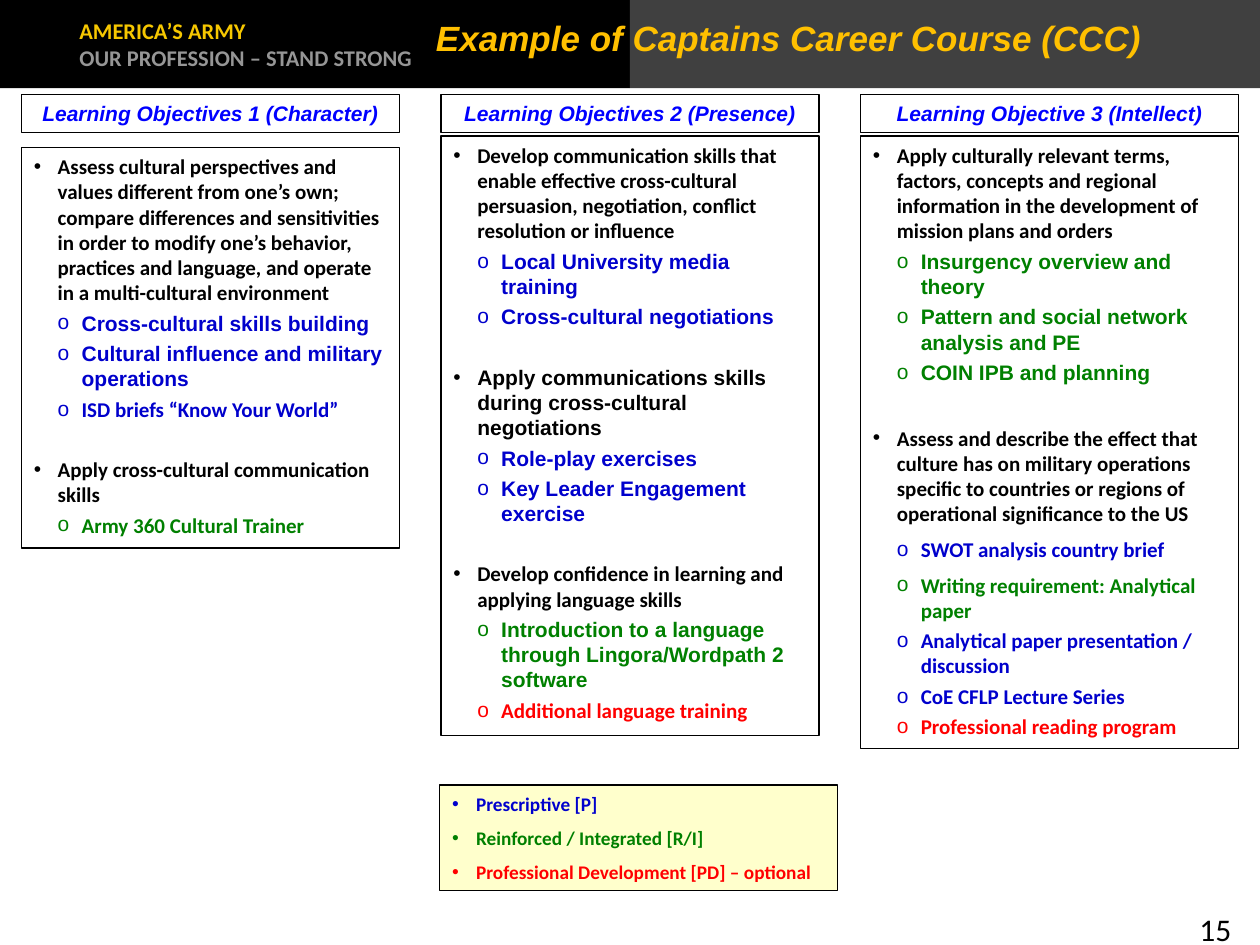
from dataclasses import dataclass

from lxml.etree import SubElement
from pptx import Presentation
from pptx.dml.color import RGBColor
from pptx.enum.shapes import MSO_SHAPE as Preset
from pptx.enum.text import MSO_ANCHOR as Anchor, PP_ALIGN as Align
from pptx.oxml.ns import qn
from pptx.util import Inches, Pt

BLACK, BLUE, GREEN, RED = "000000", "0000CC", "008000", "FF0000"
GOLD, HEADING_BLUE = "FFC000", "0000FF"
COLUMN_WIDTH = 3
COLUMN_PITCH = 3.33
COLUMN_LEFT = 0.17


@dataclass(frozen=True)
class Item:
    text: str
    color: str = BLACK
    font: str = "Calibri"
    bullet: str = "•"
    before: float = 3
    after: float = 0


@dataclass(frozen=True)
class Column:
    heading: str
    top: float
    height: float
    items: tuple[Item, ...]


def activity(text: str, color: str, font: str = "Calibri", after: float = 0) -> Item:
    return Item(text, color, font, bullet="o", after=after)


def rgb(color: str) -> RGBColor:
    return RGBColor.from_string(color)


def write(frame, text: str, *, size: float, color: str, font: str = "Calibri",
          bold: bool = True, italic: bool = False, align=Align.LEFT,
          bullet: str = "", margin: float = 0, hang: float = 0,
          before: float = 0, after: float = 0) -> None:
    is_first = not frame.text
    paragraph = frame.paragraphs[0] if is_first else frame.add_paragraph()
    paragraph.alignment = align
    paragraph.space_before = Pt(0 if is_first else before)
    paragraph.space_after = Pt(after)
    properties = paragraph._p.get_or_add_pPr()
    properties.set("marL", str(Inches(margin)))
    properties.set("indent", str(Inches(-hang)))
    if bullet:
        SubElement(properties, qn("a:buFont"), typeface="Arial")
        SubElement(properties, qn("a:buChar"), char=bullet)
    run = paragraph.add_run()
    run.text = text
    run.font.name = font
    run.font.size = Pt(size)
    run.font.bold = bold
    run.font.italic = italic
    run.font.color.rgb = rgb(color)


def draw_box(slide, left: float, top: float, width: float, height: float, *,
             fill: str = "", outline: str = "", anchor=Anchor.TOP):
    box = slide.shapes.add_shape(
        Preset.RECTANGLE, Inches(left), Inches(top), Inches(width), Inches(height))
    box.shadow.inherit = False
    if fill:
        box.fill.solid()
        box.fill.fore_color.rgb = rgb(fill)
    else:
        box.fill.background()
    if outline:
        box.line.color.rgb = rgb(outline)
        box.line.width = Pt(0.75)
    else:
        box.line.fill.background()
    box.text_frame.word_wrap = True
    box.text_frame.vertical_anchor = anchor
    return box.text_frame


def add_text(slide, left: float, top: float, width: float, height: float):
    frame = slide.shapes.add_textbox(
        Inches(left), Inches(top), Inches(width), Inches(height)).text_frame
    frame.word_wrap = True
    return frame


def write_items(frame, items: tuple[Item, ...], size: float) -> None:
    for item in items:
        write(frame, item.text, size=size, color=item.color, font=item.font,
              bullet=item.bullet, margin=0.38 if item.bullet == "o" else 0.19,
              hang=0.19, before=item.before, after=item.after)


def draw_column(slide, left: float, column: Column) -> None:
    heading = draw_box(slide, left, 0.75, COLUMN_WIDTH, 0.3, outline=BLACK)
    write(heading, column.heading, size=12, color=HEADING_BLUE, font="Arial",
          italic=True, align=Align.CENTER)
    body = draw_box(slide, left, column.top, COLUMN_WIDTH, column.height, outline=BLACK)
    write_items(body, column.items, 12)


def draw_banner(slide) -> None:
    motto = draw_box(slide, 0, 0, 5, 0.7, fill=BLACK, anchor=Anchor.MIDDLE)
    motto.margin_left = Inches(0.07)
    write(motto, "AMERICA’S ARMY", size=12.8, color="F6C700", margin=0.63, hang=0.07)
    write(motto, "OUR PROFESSION – STAND STRONG", size=12.8, color="969696",
          margin=0.63, hang=0.07)
    draw_box(slide, 5, 0, 5, 0.7, fill="404040")
    title = add_text(slide, 3.26, 0.08, 6, 0.42)
    write(title, "Example of Captains Career Course (CCC)", size=20, color=GOLD,
          font="Arial", italic=True, align=Align.CENTER)


COLUMNS = (
    Column("Learning Objectives 1 (Character)", 1.17, 3.18, (
        Item("Assess cultural perspectives and values different from one’s own; "
             "compare differences and sensitivities in order to modify one’s behavior, "
             "practices and language, and operate in a multi-cultural environment"),
        activity("Cross-cultural skills building", BLUE, "Arial"),
        activity("Cultural influence and military operations", BLUE, "Arial"),
        activity("ISD briefs “Know Your World”", BLUE),
        Item("Apply cross-cultural communication skills", before=20),
        activity("Army 360 Cultural Trainer", GREEN),
    )),
    Column("Learning Objectives 2 (Presence)", 1.08, 4.76, (
        Item("Develop communication skills that enable effective cross-cultural "
             "persuasion, negotiation, conflict resolution or influence"),
        activity("Local University media training", BLUE, "Arial"),
        activity("Cross-cultural negotiations", BLUE, "Arial"),
        Item("Apply communications skills during cross-cultural negotiations",
             font="Arial", before=20),
        activity("Role-play exercises", BLUE, "Arial"),
        activity("Key Leader Engagement exercise", BLUE, "Arial"),
        Item("Develop confidence in learning and applying language skills", before=20),
        activity("Introduction to a language through Lingora/Wordpath 2 software",
                 GREEN, "Arial"),
        activity("Additional language training", RED),
    )),
    Column("Learning Objective 3 (Intellect)", 1.08, 4.86, (
        Item("Apply culturally relevant terms, factors, concepts and regional "
             "information in the development of mission plans and orders"),
        activity("Insurgency overview and theory", GREEN, "Arial"),
        activity("Pattern and social network analysis and PE", GREEN, "Arial"),
        activity("COIN IPB and planning", GREEN, "Arial"),
        Item("Assess and describe the effect that culture has on military operations "
             "specific to countries or regions of operational significance to the US",
             before=23, after=3),
        activity("SWOT analysis country brief", BLUE, after=3),
        activity("Writing requirement: Analytical paper", GREEN),
        activity("Analytical paper presentation / discussion", BLUE),
        activity("CoE CFLP Lecture Series", BLUE),
        activity("Professional reading program", RED),
    )),
)

LEGEND = (
    Item("Prescriptive [P]", BLUE, after=3),
    Item("Reinforced / Integrated [R/I]", GREEN, after=3),
    Item("Professional Development [PD] – optional", RED, after=3),
)


def main() -> None:
    deck = Presentation()
    deck.slide_width, deck.slide_height = Inches(10), Inches(7.5)
    slide = deck.slides.add_slide(deck.slide_layouts[6])
    draw_banner(slide)
    for index, column in enumerate(COLUMNS):
        draw_column(slide, COLUMN_LEFT + index * COLUMN_PITCH, column)
    legend = draw_box(slide, 3.49, 6.23, 3.16, 0.84, fill="FFFFCC", outline=BLACK,
                      anchor=Anchor.MIDDLE)
    write_items(legend, LEGEND, 11)
    page_number = add_text(slide, 9.42, 7.17, 0.58, 0.33)
    write(page_number, "15", size=18, color=BLACK, bold=False)
    deck.save("out.pptx")


if __name__ == "__main__":
    main()
